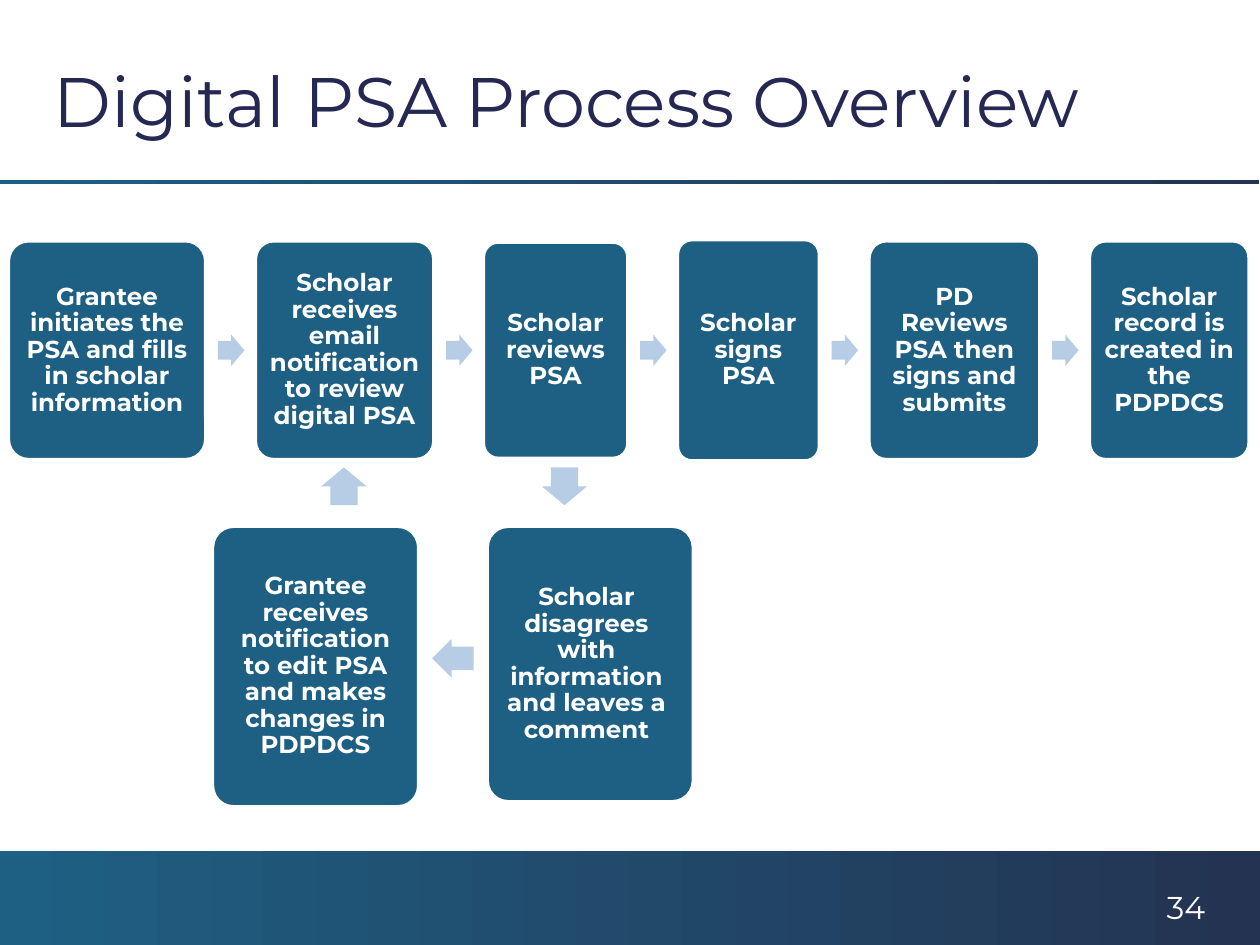
from dataclasses import dataclass

from pptx import Presentation
from pptx.dml.color import RGBColor
from pptx.enum.shapes import MSO_SHAPE
from pptx.enum.text import MSO_ANCHOR, PP_ALIGN
from pptx.util import Inches, Pt

RECTANGLE = MSO_SHAPE.RECTANGLE
ROUNDED = MSO_SHAPE.ROUNDED_RECTANGLE
ARROW = MSO_SHAPE.RIGHT_ARROW
TOP, MIDDLE = MSO_ANCHOR.TOP, MSO_ANCHOR.MIDDLE
LEFT, CENTER = PP_ALIGN.LEFT, PP_ALIGN.CENTER

FONT = "Montserrat"
TEAL, NAVY, TITLE_INK = "1E6083", "243352", "242852"
ARROW_BLUE, WHITE = "B7CCE5", "FFFFFF"

ROW_START, ROW_MIDDLE, ROW_GAP = 0.07, 2.78, 0.4
ARROW_LEAD = 0.3  # from an arrow's left edge to the next step
STEP_INSET = 0.06


@dataclass
class Step:
    text: str
    width: float
    height: float
    left: float = 0
    top: float = 0
    right_inset: float = STEP_INSET


@dataclass
class Arrow:
    left: float
    top: float
    width: float
    height: float
    rotation: int = 0


MAIN_STEPS = [
    Step("Grantee initiates the PSA and fills in scholar information", 1.56, 1.73),
    Step("Scholar receives email notification to review digital PSA", 1.41, 1.73),
    Step("Scholar reviews PSA", 1.14, 1.71),
    Step("Scholar signs PSA", 1.12, 1.75),
    Step("PD Reviews PSA then signs and submits", 1.35, 1.73),
    Step("Scholar record is created in the PDPDCS", 1.26, 1.73),
]
LOOP_STEPS = [
    Step("Scholar disagrees with information and leaves a comment",
         1.63, 2.18, 3.87, 4.18, right_inset=0.12),
    Step("Grantee receives notification to edit PSA and makes changes in PDPDCS",
         1.63, 2.22, 1.69, 4.18),
]
LOOP_ARROWS = [
    Arrow(4.33, 3.68, 0.3, 0.36, 90),
    Arrow(3.43, 5.07, 0.33, 0.31, 180),
    Arrow(2.58, 3.68, 0.3, 0.36, 270),
]


def color(value: str) -> RGBColor:
    return RGBColor.from_string(value)


def add_plain_shape(page, kind, left: float, top: float, width: float, height: float):
    shape = page.shapes.add_shape(
        kind, Inches(left), Inches(top), Inches(width), Inches(height))
    shape.shadow.inherit = False
    shape.line.fill.background()
    return shape


def write(shape, text: str, size: int, ink: str, anchor=TOP, align=LEFT,
          bold: bool = False) -> None:
    frame = shape.text_frame
    frame.word_wrap = True
    frame.vertical_anchor = anchor
    para = frame.paragraphs[0]
    para.alignment = align
    span = para.add_run()
    span.text = text
    for name, value in {"name": FONT, "size": Pt(size), "bold": bold}.items():
        setattr(span.font, name, value)
    span.font.color.rgb = color(ink)


def add_label(page, text: str, left: float, top: float, width: float, height: float,
              size: int, ink: str, anchor=TOP) -> None:
    box = page.shapes.add_textbox(
        Inches(left), Inches(top), Inches(width), Inches(height))
    write(box, text, size, ink, anchor)


def add_band(page, left: float, top: float, height: float) -> None:
    band = add_plain_shape(page, RECTANGLE, left, top, 10, height)
    band.fill.gradient()
    band.fill.gradient_angle = 0
    for stop, shade in zip(band.fill.gradient_stops, (TEAL, NAVY)):
        stop.color.rgb = color(shade)


def add_step(page, step: Step) -> None:
    box = add_plain_shape(page, ROUNDED, step.left, step.top, step.width, step.height)
    box.adjustments[0] = 0.1
    box.fill.solid()
    box.fill.fore_color.rgb = color(TEAL)
    box.line.color.rgb = color(WHITE)
    box.line.width = Pt(1.5)
    insets = {"margin_left": STEP_INSET, "margin_top": STEP_INSET,
              "margin_right": step.right_inset, "margin_bottom": STEP_INSET}
    for name, value in insets.items():
        setattr(box.text_frame, name, Inches(value))
    write(box, step.text, 14, WHITE, MIDDLE, CENTER, bold=True)
    box.text_frame.paragraphs[0].line_spacing = 0.9


def add_arrow(page, arrow: Arrow) -> None:
    shape = add_plain_shape(
        page, ARROW, arrow.left, arrow.top, arrow.width, arrow.height)
    shape.adjustments[0] = 0.6
    shape.adjustments[1] = 0.5
    shape.rotation = arrow.rotation
    shape.fill.solid()
    shape.fill.fore_color.rgb = color(ARROW_BLUE)


def add_main_row(page) -> None:
    left = ROW_START
    for index, step in enumerate(MAIN_STEPS):
        if index:
            add_arrow(page, Arrow(left - ARROW_LEAD, ROW_MIDDLE - 0.125, 0.21, 0.25))
        step.left, step.top = left, ROW_MIDDLE - step.height / 2
        add_step(page, step)
        left += step.width + ROW_GAP


def main() -> None:
    deck = Presentation()
    deck.slide_width, deck.slide_height = Inches(10), Inches(7.5)
    page = deck.slides.add_slide(deck.slide_layouts[6])

    # Footer band, title rule and title
    add_band(page, 0, 6.75, 0.75)
    add_band(page, -0.01, 1.43, 0.03)
    add_label(page, "Digital PSA Process Overview", 0.33, 0.25, 9.17, 1.08,
              40, TITLE_INK, MIDDLE)

    # Main process
    add_main_row(page)

    # Page number
    add_label(page, "34", 9.16, 7, 0.58, 0.27, 18, WHITE)

    # Correction loop
    for arrow in LOOP_ARROWS:
        add_arrow(page, arrow)
    for step in LOOP_STEPS:
        add_step(page, step)

    deck.save("out.pptx")


if __name__ == "__main__":
    main()
